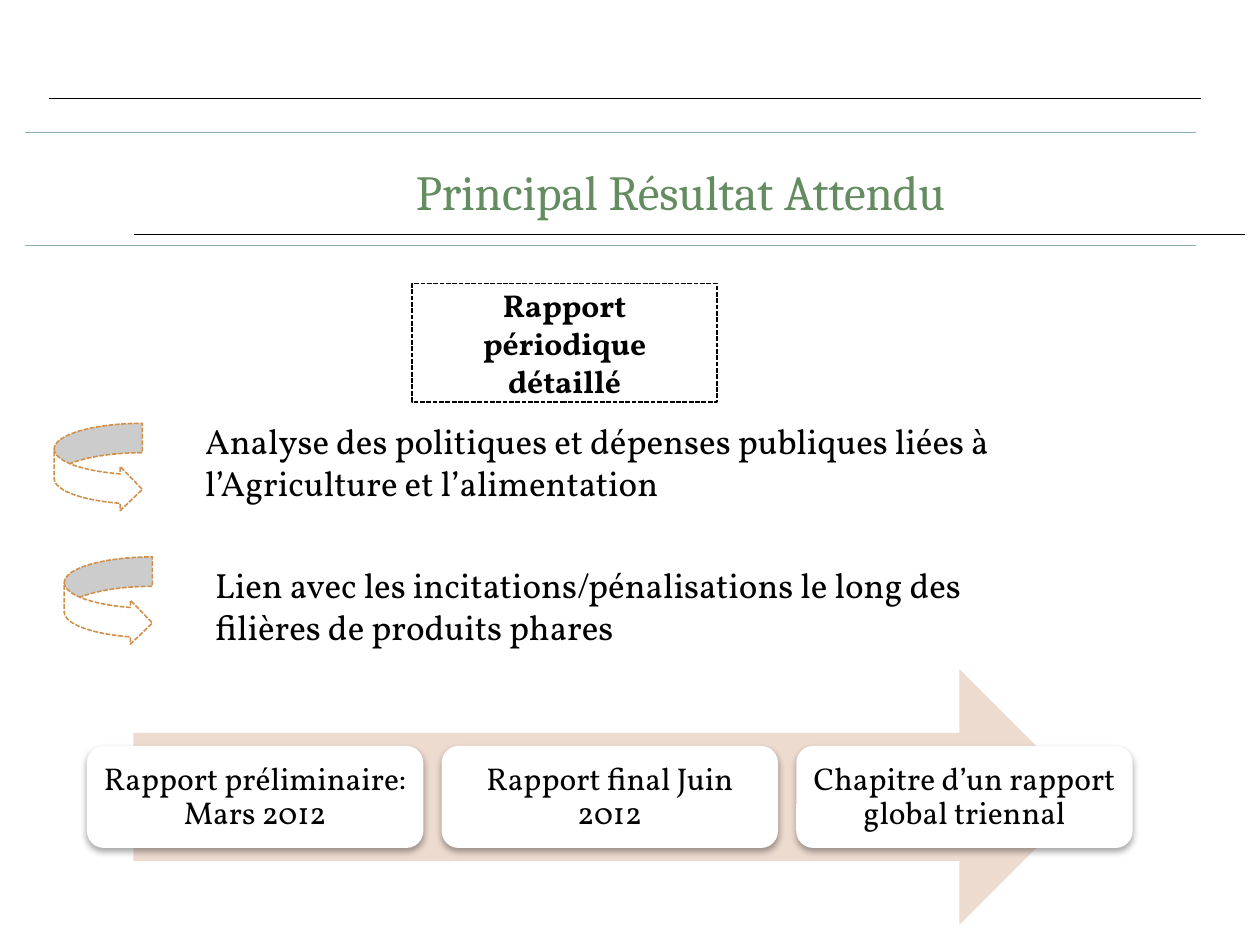
from dataclasses import dataclass

from lxml.etree import SubElement
from pptx import Presentation
from pptx.dml.color import RGBColor
from pptx.enum.dml import MSO_LINE
from pptx.enum.shapes import MSO_CONNECTOR, MSO_SHAPE
from pptx.enum.text import MSO_ANCHOR, PP_ALIGN
from pptx.oxml.ns import qn
from pptx.util import Inches, Pt


@dataclass(frozen=True)
class Theme:
    black: str = "000000"
    white: str = "FFFFFF"
    teal: str = "8CADAE"
    green: str = "648C61"
    orange: str = "D19049"
    peach: str = "EEDBD0"
    title_font: str = "Cambria"
    body_font: str = "Vollkorn"
    title_size: float = 28
    body_size: float = 20
    label_size: float = 18
    rule_width: float = 0.75
    dash_width: float = 0.9


@dataclass(frozen=True)
class Box:
    left: float
    top: float
    width: float
    height: float

    def lengths(self) -> tuple:
        return tuple(Inches(value) for value in (self.left, self.top, self.width, self.height))


@dataclass(frozen=True)
class Rule:
    left: float
    right: float
    top: float
    color: str


@dataclass(frozen=True)
class Point:
    text: str
    arrow: Box
    body: Box


THEME = Theme()

RULES = [
    Rule(0.2, 9.49, 1.95, THEME.teal),
    Rule(0.2, 9.49, 1.05, THEME.teal),
    Rule(0.39, 9.53, 0.78, THEME.black),
    Rule(1.06, 9.88, 1.86, THEME.black),
]
POINTS = [
    Point("Analyse des politiques et dépenses publiques liées à l’Agriculture et l’alimentation",
          Box(0.43, 3.36, 0.7, 0.7), Box(1.53, 3.28, 7.81, 0.77)),
    Point("Lien avec les incitations/pénalisations le long des filières de produits phares",
          Box(0.51, 4.42, 0.7, 0.7), Box(1.61, 4.42, 6.88, 0.77)),
]
MILESTONES = [
    "Rapport préliminaire: Mars 2012",
    "Rapport final Juin 2012",
    "Chapitre d’un rapport global triennal",
]
FIRST_CARD = Box(0.69, 5.92, 2.67, 0.81)
CARD_GAP = 0.145


def rgb(color: str) -> RGBColor:
    return RGBColor.from_string(color)


def write(shape, text: str, size: float, font: str = THEME.body_font,
          color: str = THEME.black, bold: bool = False, align=PP_ALIGN.CENTER):
    shape.text_frame.word_wrap = True
    paragraph = shape.text_frame.paragraphs[0]
    paragraph.alignment = align
    run = paragraph.add_run()
    run.text = text
    run.font.size = Pt(size)
    run.font.name = font
    run.font.bold = bold
    run.font.color.rgb = rgb(color)
    return paragraph


def add_rule(slide, rule: Rule) -> None:
    connector = slide.shapes.add_connector(
        MSO_CONNECTOR.STRAIGHT, Inches(rule.left), Inches(rule.top),
        Inches(rule.right), Inches(rule.top))
    connector.line.color.rgb = rgb(rule.color)
    connector.line.width = Pt(THEME.rule_width)
    SubElement(connector._element.spPr, qn("a:effectLst"))


def add_filled(slide, kind: MSO_SHAPE, box: Box, fill: str, dash_color: str = ""):
    shape = slide.shapes.add_shape(kind, *box.lengths())
    shape.shadow.inherit = False
    shape.fill.solid()
    shape.fill.fore_color.rgb = rgb(fill)
    if dash_color:
        shape.line.color.rgb = rgb(dash_color)
        shape.line.width = Pt(THEME.dash_width)
        shape.line.dash_style = MSO_LINE.SQUARE_DOT
    else:
        shape.line.fill.background()
    return shape


def add_soft_shadow(shape) -> None:
    effects = shape._element.spPr.find(qn("a:effectLst"))
    shadow = SubElement(effects, qn("a:outerShdw"), blurRad=str(Pt(4)), dist=str(Pt(2)),
                        dir="5400000", rotWithShape="0")
    color = SubElement(shadow, qn("a:srgbClr"), val=THEME.black)
    SubElement(color, qn("a:alpha"), val="35000")


def add_title(slide, text: str) -> None:
    title = slide.shapes.add_textbox(*Box(1.29, 1.23, 8.22, 0.57).lengths())
    write(title, text, THEME.title_size, THEME.title_font, THEME.green)


def add_point(slide, point: Point) -> None:
    arrow = add_filled(slide, MSO_SHAPE.CURVED_RIGHT_ARROW, point.arrow, THEME.white, THEME.orange)
    for index, value in enumerate((0.334, 0.5, 0.25)):
        arrow.adjustments[index] = value
    body = slide.shapes.add_textbox(*point.body.lengths())
    write(body, point.text, THEME.body_size, align=PP_ALIGN.LEFT)


def add_milestone(slide, index: int, text: str) -> None:
    left = FIRST_CARD.left + index * (FIRST_CARD.width + CARD_GAP)
    box = Box(left, FIRST_CARD.top, FIRST_CARD.width, FIRST_CARD.height)
    card = add_filled(slide, MSO_SHAPE.ROUNDED_RECTANGLE, box, THEME.white)
    add_soft_shadow(card)
    frame = card.text_frame
    frame.vertical_anchor = MSO_ANCHOR.MIDDLE
    frame.margin_left = frame.margin_right = Inches(0.07)
    frame.margin_top = frame.margin_bottom = Inches(0.07)
    write(card, text, THEME.label_size).line_spacing = 0.9


def main() -> None:
    presentation = Presentation()
    presentation.slide_width = Inches(10)
    presentation.slide_height = Inches(7.5)
    slide = presentation.slides.add_slide(presentation.slide_layouts[6])

    for rule in RULES:
        add_rule(slide, rule)
    add_title(slide, "Principal Résultat Attendu")

    add_filled(slide, MSO_SHAPE.RIGHT_ARROW, Box(1.06, 5.31, 7.57, 2.03), THEME.peach)
    for index, text in enumerate(MILESTONES):
        add_milestone(slide, index, text)

    report = add_filled(slide, MSO_SHAPE.RECTANGLE, Box(3.27, 2.25, 2.42, 0.94),
                        THEME.white, THEME.black)
    report.text_frame.vertical_anchor = MSO_ANCHOR.MIDDLE
    write(report, "Rapport périodique détaillé", THEME.label_size, bold=True)

    for point in POINTS:
        add_point(slide, point)

    presentation.save("out.pptx")


if __name__ == "__main__":
    main()
